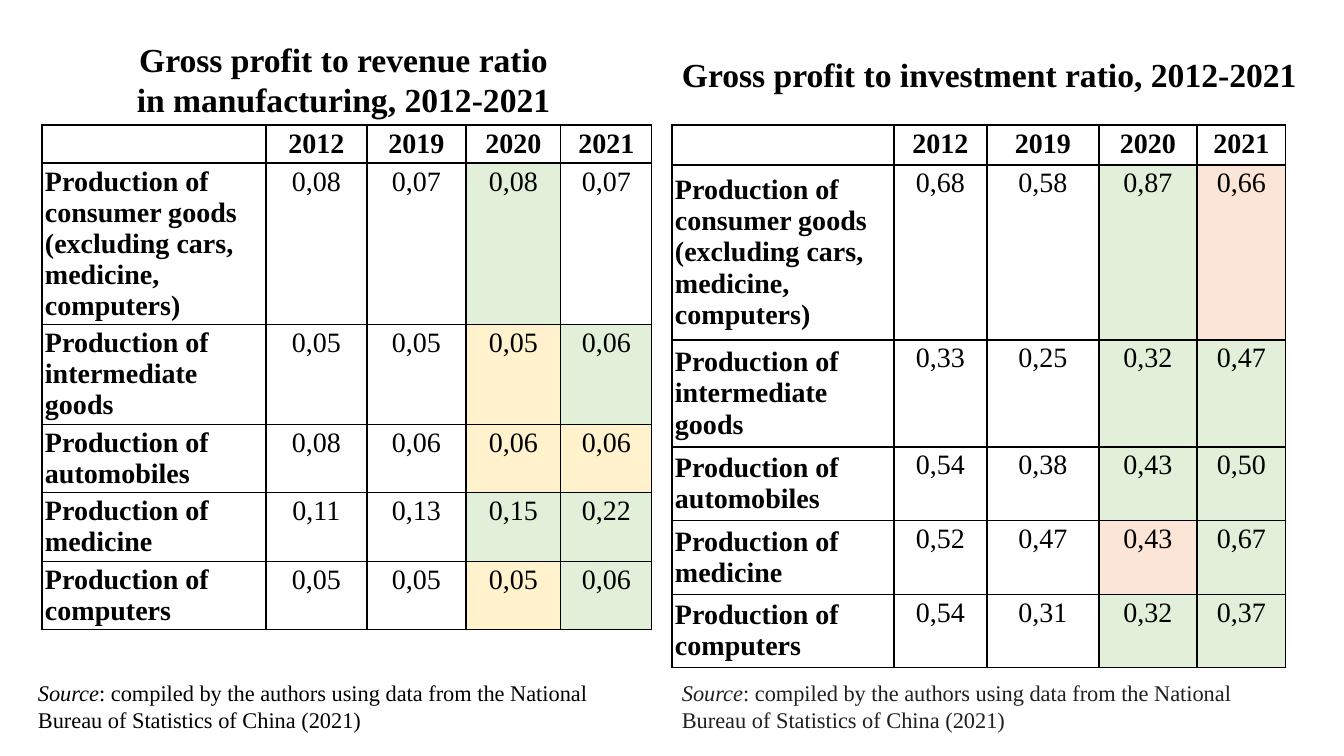
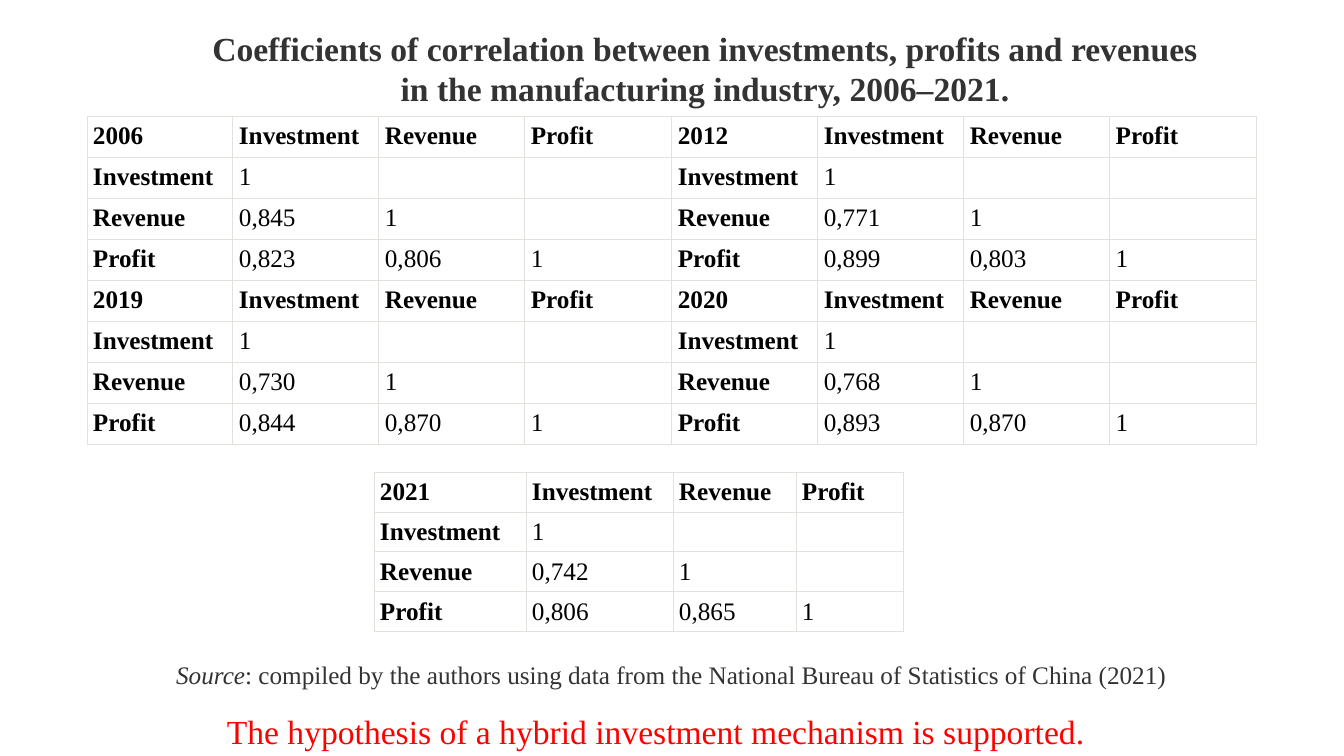
from lxml import etree
from pptx import Presentation
from pptx import util as u
from pptx.dml.color import RGBColor
from pptx.enum import text
from pptx.oxml.ns import qn

EMU_PER_PX = 914400 / 100.8
SLIDE_SIZE = (1344, 756)
FONT = "Times New Roman"
TITLE_SIZE = 24

BLACK = RGBColor(0x00, 0x00, 0x00)
CHARCOAL = RGBColor(0x1F, 0x1F, 0x1F)
GRAY = RGBColor(0x33, 0x33, 0x33)
RED = RGBColor(0xFF, 0x00, 0x00)
PALE_GRAY = RGBColor(0xE2, 0xE2, 0xDC)
GREEN = RGBColor(0xE2, 0xF0, 0xD9)
YELLOW = RGBColor(0xFF, 0xF2, 0xCC)
ORANGE = RGBColor(0xFB, 0xE5, 0xD6)
MARKS = {"g": GREEN, "y": YELLOW, "o": ORANGE}

LEFT, CENTER = text.PP_ALIGN.LEFT, text.PP_ALIGN.CENTER
TOP, MIDDLE = text.MSO_ANCHOR.TOP, text.MSO_ANCHOR.MIDDLE

YEARS = ["2012", "2019", "2020", "2021"]
SECTORS = [
    "Production of consumer goods (excluding cars, medicine, computers)",
    "Production of intermediate goods",
    "Production of automobiles",
    "Production of medicine",
    "Production of computers",
]
# One row per sector: the values by year, then the colour marks of 2020 and 2021.
REVENUE_RATIOS = [
    (["0,08", "0,07", "0,08", "0,07"], "g-"),
    (["0,05", "0,05", "0,05", "0,06"], "yg"),
    (["0,08", "0,06", "0,06", "0,06"], "yy"),
    (["0,11", "0,13", "0,15", "0,22"], "gg"),
    (["0,05", "0,05", "0,05", "0,06"], "yg"),
]
INVESTMENT_RATIOS = [
    (["0,68", "0,58", "0,87", "0,66"], "go"),
    (["0,33", "0,25", "0,32", "0,47"], "gg"),
    (["0,54", "0,38", "0,43", "0,50"], "gg"),
    (["0,52", "0,47", "0,43", "0,67"], "og"),
    (["0,54", "0,31", "0,32", "0,37"], "gg"),
]
# Investment-revenue, investment-profit and revenue-profit coefficients.
CORRELATIONS = {
    "2006": ("0,845", "0,823", "0,806"),
    "2012": ("0,771", "0,899", "0,803"),
    "2019": ("0,730", "0,844", "0,870"),
    "2020": ("0,768", "0,893", "0,870"),
    "2021": ("0,742", "0,806", "0,865"),
}


def px(length):
    return u.Emu(round(length * EMU_PER_PX))


def style_paragraph(para, size, color, bold=False, align=LEFT):
    para.alignment = align
    para.font.name = FONT
    para.font.size = u.Pt(size)
    para.font.bold = bold
    para.font.color.rgb = color


def add_text_box(page, box):
    frame = page.shapes.add_textbox(*map(px, box)).text_frame
    frame.word_wrap = True
    return frame


def add_line(page, box, words, size, color, bold=False):
    frame = add_text_box(page, box)
    frame.text = words
    style_paragraph(frame.paragraphs[0], size, color, bold)


def add_source(page, box, size, color, align=LEFT):
    para = add_text_box(page, box).paragraphs[0]
    style_paragraph(para, size, color, align=align)
    label = para.add_run()
    label.text = "Source"
    label.font.italic = True
    para.add_run().text = (
        ": compiled by the authors using data from the "
        "National Bureau of Statistics of China (2021)"
    )


def set_title(page, box, words, color):
    title = page.shapes.title
    title.left, title.top, title.width, title.height = map(px, box)
    frame = title.text_frame
    frame.text = words
    frame.word_wrap = True
    frame.auto_size = text.MSO_AUTO_SIZE.NONE
    frame.vertical_anchor = TOP
    for para in frame.paragraphs:
        style_paragraph(para, TITLE_SIZE, color, bold=True, align=CENTER)


def set_borders(cell, color, points):
    properties = cell._tc.get_or_add_tcPr()
    for side in ("lnL", "lnR", "lnT", "lnB"):
        line = etree.SubElement(properties, qn(f"a:{side}"), w=str(u.Pt(points)))
        fill = etree.SubElement(line, qn("a:solidFill"))
        etree.SubElement(fill, qn("a:srgbClr"), val=str(color))


def add_grid(page, origin, columns, rows, border, inset):
    """Add an unstyled table with bordered, unfilled cells."""
    box = (*origin, sum(columns), sum(rows))
    table = page.shapes.add_table(len(rows), len(columns), *map(px, box)).table
    table.first_row = table.horz_banding = False
    for column, width in zip(table.columns, columns):
        column.width = px(width)
    for row, height in zip(table.rows, rows):
        row.height = px(height)
    for cell in table.iter_cells():
        set_borders(cell, *border)
        cell.fill.background()
        cell.margin_left = cell.margin_right = px(inset)
        cell.margin_top = cell.margin_bottom = px(inset)
    return table


def write_cell(cell, words, size, bold, align=LEFT):
    cell.text = words
    style_paragraph(cell.text_frame.paragraphs[0], size, BLACK, bold, align)


def add_ratio_table(page, origin, columns, rows, ratios, label_anchor):
    table = add_grid(page, origin, columns, rows, (BLACK, 1), inset=3)
    for col, year in enumerate(YEARS, 1):
        write_cell(table.cell(0, col), year, 20, True, CENTER)
    for row, (sector, (values, marks)) in enumerate(zip(SECTORS, ratios), 1):
        label = table.cell(row, 0)
        write_cell(label, sector, 20, True)
        label.vertical_anchor = label_anchor
        for col, value in enumerate(values, 1):
            write_cell(table.cell(row, col), value, 20, False, CENTER)
        for col, mark in enumerate(marks, 3):
            if mark in MARKS:
                fill = table.cell(row, col).fill
                fill.solid()
                fill.fore_color.rgb = MARKS[mark]


def correlation_matrix(year):
    revenue, profit, profit_revenue = CORRELATIONS[year]
    return [
        [year, "Investment", "Revenue", "Profit"],
        ["Investment", "1", "", ""],
        ["Revenue", revenue, "1", ""],
        ["Profit", profit, profit_revenue, "1"],
    ]


def add_correlation_table(page, origin, columns, row_height, year_grid):
    """Fill one table with a 4 by 4 matrix for each year of the grid."""
    rows = [row_height] * 4 * len(year_grid)
    table = add_grid(page, origin, columns, rows, (PALE_GRAY, 0.75), inset=6)
    for band, years in enumerate(year_grid):
        for block, year in enumerate(years):
            for row, values in enumerate(correlation_matrix(year)):
                for col, value in enumerate(values):
                    cell = table.cell(band * 4 + row, block * 4 + col)
                    write_cell(cell, value, 18, row == 0 or col == 0)


def add_page(deck):
    return deck.slides.add_slide(deck.slide_layouts.get_by_name("Title Only"))


def build_ratios(deck):
    page = add_page(deck)
    set_title(
        page, (79, 34, 529, 92),
        "Gross profit to revenue ratio\nin manufacturing, 2012-2021", BLACK,
    )
    add_ratio_table(
        page, (42, 125), [224, 101, 99, 95, 91],
        [38, 161, 100, 68, 69, 68], REVENUE_RATIOS, TOP,
    )
    add_source(page, (28, 674, 624, 65), 16, BLACK)
    add_line(
        page, (672, 49, 672, 50),
        "Gross profit to investment ratio, 2012-2021", TITLE_SIZE, BLACK, bold=True,
    )
    add_ratio_table(
        page, (672, 125), [222, 93, 112, 98, 89],
        [40, 175, 107, 73, 74, 73], INVESTMENT_RATIOS, MIDDLE,
    )
    add_source(page, (672, 674, 624, 65), 16, CHARCOAL)


def build_correlations(deck):
    page = add_page(deck)
    set_title(
        page, (199, 23, 1012, 92),
        "Coefficients of correlation between investments, profits and revenues "
        "in the manufacturing industry, 2006–2021.", GRAY,
    )
    add_correlation_table(
        page, (87, 116), [146, 146, 146, 147] * 2, 41,
        [["2006", "2012"], ["2019", "2020"]],
    )
    add_correlation_table(page, (374, 472), [152, 147, 123, 108], 40, [["2021"]])
    add_source(page, (67, 654, 1209, 40), 18, GRAY, CENTER)
    add_line(
        page, (217, 706, 910, 50),
        "The hypothesis of a hybrid investment mechanism is supported.",
        TITLE_SIZE, RED,
    )


def main():
    deck = Presentation()
    deck.slide_width, deck.slide_height = map(px, SLIDE_SIZE)
    build_ratios(deck)
    build_correlations(deck)
    deck.save("out.pptx")


if __name__ == "__main__":
    main()
